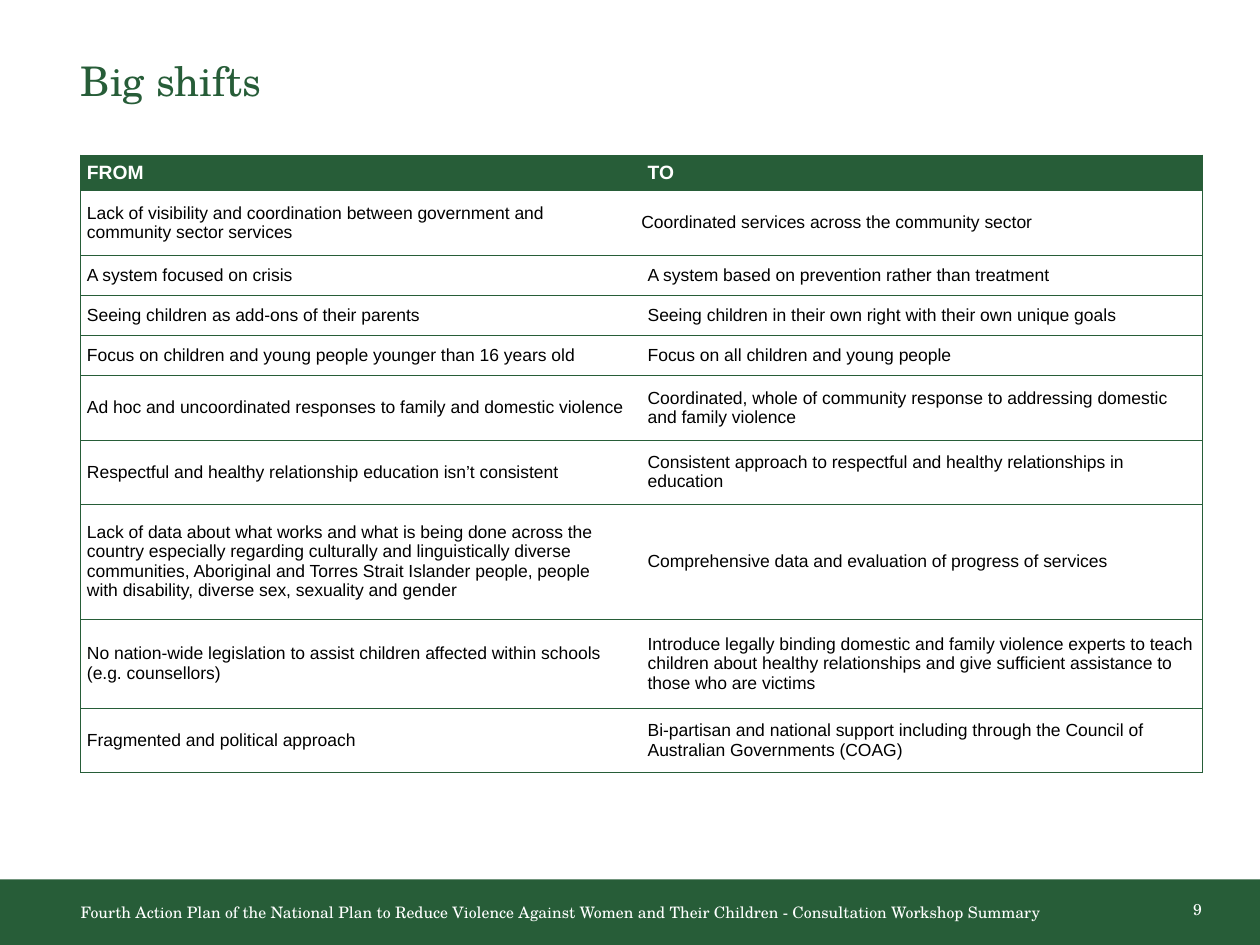
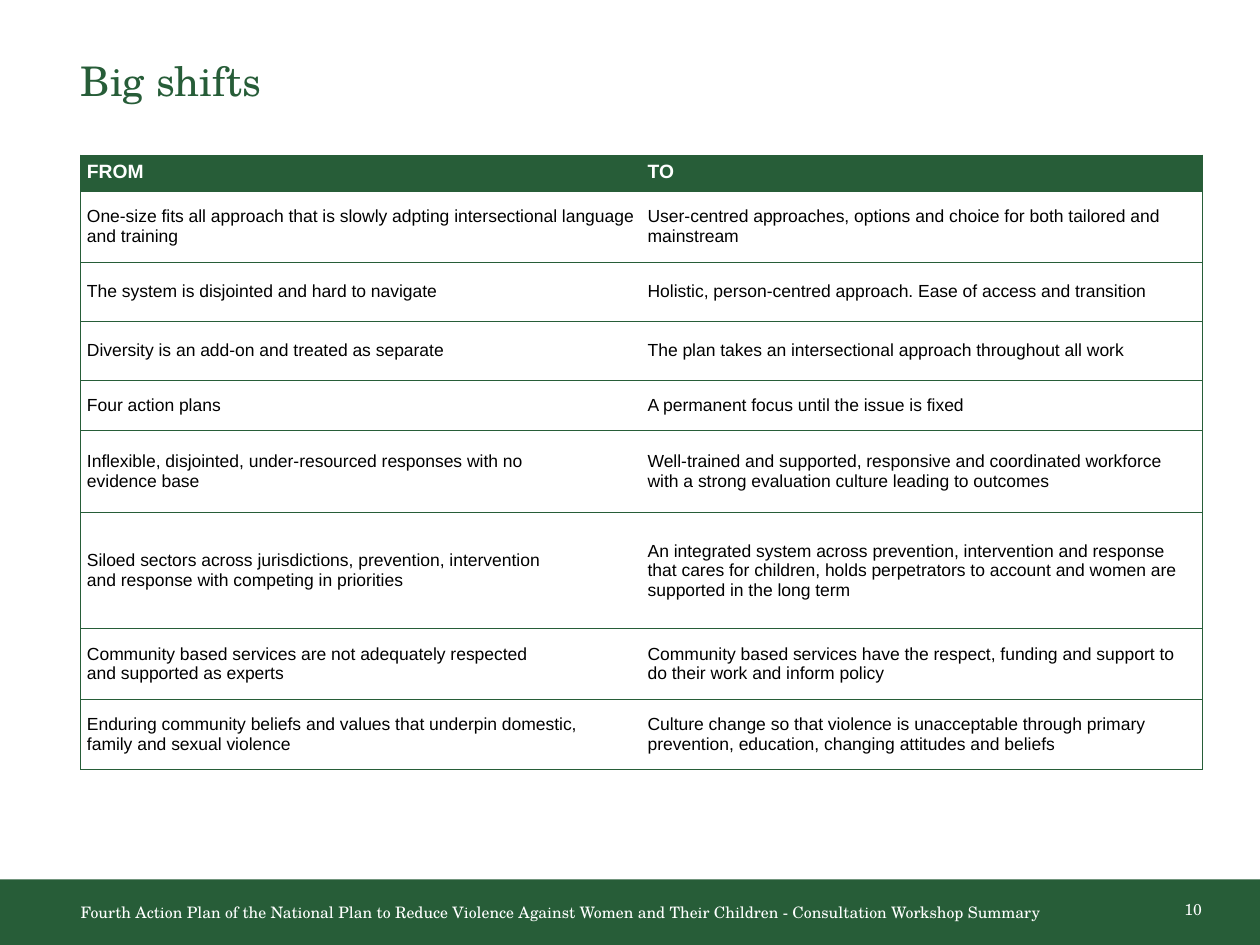
"""Build two "Big shifts" comparison slides with a shared title, table style and footer."""
import copy

import lxml.etree
import pptx
import pptx.dml.color
import pptx.enum.shapes
import pptx.enum.text
import pptx.oxml.ns
import pptx.util

Inches, Pt = pptx.util.Inches, pptx.util.Pt
ANCHOR, ALIGN = pptx.enum.text.MSO_ANCHOR, pptx.enum.text.PP_ALIGN
qn = pptx.oxml.ns.qn

TITLE = "Big shifts"
FOOTER = ("Fourth Action Plan of the National Plan to Reduce Violence Against Women "
          "and Their Children - Consultation Workshop Summary")
HEADINGS = ("FROM", "TO")

SLIDES = [
    {"number": 9, "header_height": 0.28, "header_anchor": ANCHOR.MIDDLE, "flush": {(1, 1)}, "shifts": [
        (0.51, "Lack of visibility and coordination between government and \ncommunity sector services",
         "Coordinated services across the community sector"),
        (0.32, "A system focused on crisis",
         "A system based on prevention rather than treatment"),
        (0.32, "Seeing children as add-ons of their parents",
         "Seeing children in their own right with their own unique goals"),
        (0.32, "Focus on children and young people younger than 16 years old",
         "Focus on all children and young people"),
        (0.51, "Ad hoc and uncoordinated responses to family and domestic violence",
         "Coordinated, whole of community response to addressing domestic and family violence"),
        (0.51, "Respectful and healthy relationship education isn’t consistent",
         "Consistent approach to respectful and healthy relationships in education"),
        (0.91, "Lack of data about what works and what is being done across the country especially "
               "regarding culturally and linguistically diverse communities, Aboriginal and Torres "
               "Strait Islander people, people \nwith disability, diverse sex, sexuality and gender",
         "Comprehensive data and evaluation of progress of services"),
        (0.71, "No nation-wide legislation to assist children affected within schools (e.g. counsellors)",
         "Introduce legally binding domestic and family violence experts to teach children about "
         "healthy relationships and give sufficient assistance to those who are victims"),
        (0.51, "Fragmented and political approach",
         "Bi-partisan and national support including through the Council of Australian "
         "Governments (COAG)"),
    ]},
    {"number": 10, "header_height": 0.29, "header_anchor": ANCHOR.TOP, "flush": set(), "shifts": [
        (0.56, "One-size fits all approach that is slowly adpting intersectional language and training",
         "User-centred approaches, options and choice for both tailored and mainstream"),
        (0.47, "The system is disjointed and hard to navigate",
         "Holistic, person-centred approach. Ease of access and transition"),
        (0.47, "Diversity is an add-on and treated as separate",
         "The plan takes an intersectional approach throughout all work"),
        (0.4, "Four action plans",
         "A permanent focus until the issue is fixed"),
        (0.65, "Inflexible, disjointed, under-resourced responses with no \nevidence base",
         "Well-trained and supported, responsive and coordinated workforce with a strong "
         "evaluation culture leading to outcomes"),
        (0.92, "Siloed sectors across jurisdictions, prevention, intervention \n"
               "and response with competing in priorities",
         "An integrated system across prevention, intervention and response that cares for "
         "children, holds perpetrators to account and women are supported in the long term"),
        (0.56, "Community based services are not adequately respected \nand supported as experts",
         "Community based services have the respect, funding and support to do their work "
         "and inform policy"),
        (0.56, "Enduring community beliefs and values that underpin domestic, \n"
               "family and sexual violence",
         "Culture change so that violence is unacceptable through primary prevention, "
         "education, changing attitudes and beliefs"),
    ]},
]

SERIF, SANS = "TeX Gyre Schola", "Arial"
THEME = {
    "green": "275D38",
    "rule": 0.5,
    "inset": 0.05,
    "no_grid_style": "{2D5ABB26-0587-4C30-8999-92F81FD0307C}",
    "title": {"name": SERIF, "size": 23.3, "color": "275D38", "bold": False},
    "footer": {"name": SERIF, "size": 9, "color": "FFFFFF", "bold": False},
    "header": {"name": SANS, "size": 11, "color": "FFFFFF", "bold": True},
    "body": {"name": SANS, "size": 10, "color": "000000", "bold": False},
}
WIDTH, HEIGHT = 10, 7.5
LEFT, TABLE_TOP, TABLE_WIDTH = 0.64, 1.23, 8.9
BAND_TOP = 6.98
SIDES = ("left", "right", "top", "bottom")


def rgb(value):
    return pptx.dml.color.RGBColor.from_string(value)


def write(tf, text, style, anchor, inset=0.0):
    formats = {"margin_" + side: Inches(inset) for side in SIDES}
    formats["vertical_anchor"] = anchor
    for name, value in formats.items():
        setattr(tf, name, value)
    p = tf.text_frame.paragraphs[0] if hasattr(tf, "text_frame") else tf.paragraphs[0]
    p.text = text
    for r in p.runs:
        for name, value in {"name": style["name"], "size": Pt(style["size"]), "bold": style["bold"]}.items():
            setattr(r.font, name, value)
        r.font.color.rgb = rgb(style["color"])
    for br in p._p.findall(qn("a:br")):
        br.insert(0, copy.deepcopy(p.runs[0].font._element))
    return p


def add_text(s, box, text, style, anchor=ANCHOR.MIDDLE, wrap=True):
    tf = s.shapes.add_textbox(*map(Inches, box)).text_frame
    tf.word_wrap = wrap
    return write(tf, text, style, anchor)


def set_borders(cell, sides):
    tcPr = cell._tc.get_or_add_tcPr()
    for i, side in enumerate(sides):
        ln = lxml.etree.Element(qn("a:ln" + side), w=str(Pt(THEME["rule"])))
        fill = lxml.etree.SubElement(ln, qn("a:solidFill"))
        lxml.etree.SubElement(fill, qn("a:srgbClr"), val=THEME["green"])
        tcPr.insert(i, ln)


def add_frame(s, number):
    sp = s.shapes.add_shape(pptx.enum.shapes.MSO_SHAPE.RECTANGLE, 0, Inches(BAND_TOP),
                            Inches(WIDTH), Inches(HEIGHT - BAND_TOP))
    sp.shadow.inherit = False
    sp.fill.solid()
    sp.fill.fore_color.rgb = rgb(THEME["green"])
    sp.line.fill.background()
    add_text(s, (LEFT, 7.17, 7.85, 0.14), FOOTER, THEME["footer"])
    add_text(s, (LEFT, 0.52, 8.72, 0.36), TITLE, THEME["title"], ANCHOR.TOP).line_spacing = 0.8
    add_text(s, (9.4, 7.15, 0.14, 0.14), str(number), THEME["footer"], wrap=False).alignment = ALIGN.RIGHT


def add_shifts(s, spec_row):
    rows = [(spec_row["header_height"], *HEADINGS)] + spec_row["shifts"]
    total = sum(row[0] for row in rows)
    table = s.shapes.add_table(len(rows), len(HEADINGS), Inches(LEFT), Inches(TABLE_TOP),
                               Inches(TABLE_WIDTH), Inches(total)).table
    table.first_row = table.horz_banding = False
    table._tbl.tblPr.find(qn("a:tableStyleId")).text = THEME["no_grid_style"]
    for i, (height, *texts) in enumerate(rows):
        table.rows[i].height = Inches(height)
        for j, text in enumerate(texts):
            cell = table.cell(i, j)
            header = i == 0
            inset = 0 if (i, j) in spec_row["flush"] else THEME["inset"]
            anchor = spec_row["header_anchor"] if header else ANCHOR.MIDDLE
            write(cell, text, THEME["header" if header else "body"], anchor, inset)
            if header:
                cell.fill.solid()
                cell.fill.fore_color.rgb = rgb(THEME["green"])
            else:
                cell.fill.background()
            set_borders(cell, ("LTB", "RTB")[j])


def main():
    prs = pptx.Presentation()
    prs.slide_width, prs.slide_height = Inches(WIDTH), Inches(HEIGHT)
    for content in SLIDES:
        s = prs.slides.add_slide(prs.slide_layouts[6])
        add_frame(s, content["number"])
        add_shifts(s, content)
    prs.save("out.pptx")


if __name__ == "__main__":
    main()
